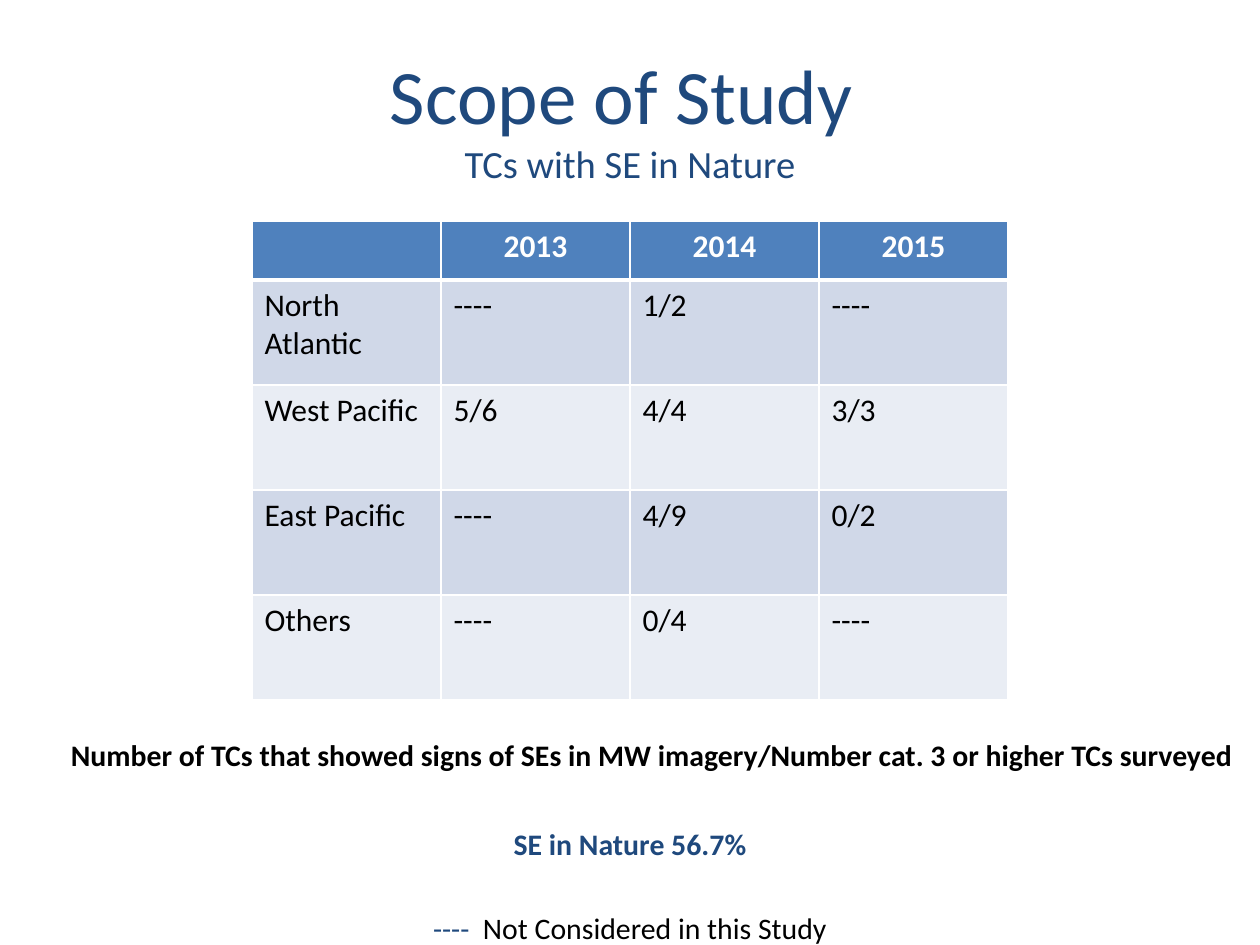
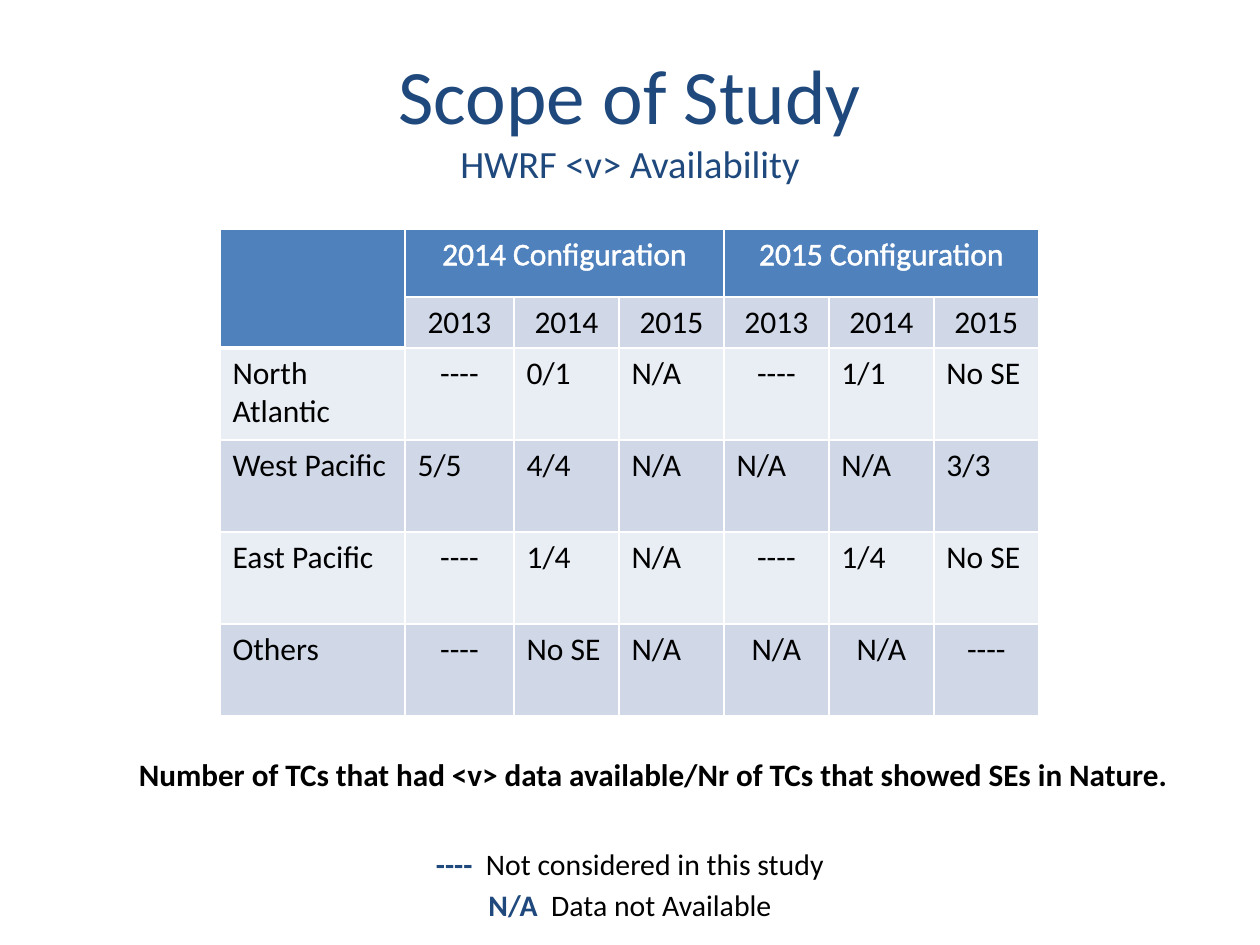
from dataclasses import dataclass
from itertools import product

from lxml.etree import SubElement
from pptx import Presentation
from pptx.dml.color import RGBColor
from pptx.enum.text import MSO_ANCHOR, MSO_AUTO_SIZE, PP_ALIGN
from pptx.oxml.ns import qn
from pptx.util import Pt

PX = 914400 / 126  # EMU per pixel


@dataclass(frozen=True)
class Theme:
    font: str = "Calibri"
    navy: str = "1F497D"
    header: str = "4F81BD"
    dark_band: str = "D0D8E8"
    light_band: str = "E9EDF4"
    white: str = "FFFFFF"
    black: str = "000000"
    title_size: float = 44
    subtitle_size: float = 22
    cell_size: float = 18
    note_size: float = 17


THEME = Theme()


def px(*lengths):
    """Convert pixel lengths to EMU."""
    return [round(length * PX) for length in lengths]


def add_run(paragraph, text, size, color, bold=False):
    run = paragraph.add_run()
    run.text = text
    run.font.name = THEME.font
    run.font.size = Pt(size)
    run.font.bold = bold
    run.font.color.rgb = RGBColor.from_string(color)
    return run


NAVY, BLACK = THEME.navy, THEME.black

# Each note is (space before in px, left indent in px, type size, runs of text, colour, bold).
SCOPES = [
    dict(
        heading="Scope of Study ",
        subtitle="TCs with SE in Nature",
        table_at=(252, 221),
        columns=[189] * 4,
        rows=[59] + [105] * 4,
        cells=[
            ["", "2013", "2014", "2015"],
            ["North Atlantic", "----", "1/2", "----"],
            ["West Pacific", "5/6", "4/4", "3/3"],
            ["East Pacific", "----", "4/9", "0/2"],
            ["Others", "----", "0/4", "----"],
        ],
        merges=[],
        centered=set(product([0], range(4))),
        header_cells=set(product([0], range(4))),
        heavy_below=set(product([0], range(4))),
        header_bold=True,
        notes_at=(0, 703, 1260, 242),
        notes_inset=34,
        notes=[
            (0, 44, THEME.note_size, [(
                "Number of TCs that showed signs of SEs in MW imagery/"
                "Number cat. 3 or higher TCs surveyed", BLACK, True)]),
            (53, 0, THEME.note_size, [("SE in Nature 56.7%", NAVY, True)]),
            (48, 0, THEME.note_size, [
                ("---- ", NAVY, False), (" Not Considered in this Study", BLACK, False)]),
        ],
    ),
    dict(
        heading="Scope of Study",
        subtitle="HWRF <v> Availability",
        table_at=(220, 229),
        columns=[185, 109] + [105] * 5,
        rows=[68, 51] + [92] * 4,
        cells=[
            ["", "2014 Configuration", "", "", "2015 Configuration", "", ""],
            [""] + ["2013", "2014", "2015"] * 2,
            ["North Atlantic", "----", "0/1", "N/A", "----", "1/1", "No SE"],
            ["West Pacific", "5/5", "4/4", "N/A", "N/A", "N/A", "3/3"],
            ["East Pacific", "----", "1/4", "N/A", "----", "1/4", "No SE"],
            ["Others", "----", "No SE", "N/A", "N/A", "N/A", "----"],
        ],
        merges=[((0, 0), (1, 0)), ((0, 1), (0, 3)), ((0, 4), (0, 6))],
        centered=set(product([0, 1], range(7)))
        | {(2, 1), (2, 4), (4, 1), (4, 4), (5, 1), (5, 4), (5, 5), (5, 6)},
        header_cells=set(product([0], range(7))) | {(1, 0)},
        heavy_below={(0, 0), (1, 0)},
        header_bold=False,
        notes_at=(63, 735, 1134, 210),
        notes_inset=20,
        notes=[
            (0, 46, 17.8, [(
                "Number of TCs that had <v> data available/"
                "Nr of TCs that showed SEs in Nature.", BLACK, True)]),
            (53, 0, THEME.note_size, [
                ("---- ", NAVY, True), (" Not considered in this study", BLACK, False)]),
            (6, 0, THEME.note_size, [
                ("N/A ", NAVY, True), (" Data not Available", BLACK, False)]),
        ],
    ),
]

prs = Presentation()
prs.slide_width, prs.slide_height = px(1260, 945)

for scope in SCOPES:
    slide = prs.slides.add_slide(prs.slide_layouts[1])

    # Title with its subtitle line
    title = slide.shapes.title
    title.left, title.top, title.width, title.height = px(63, 38, 1134, 157)
    title.text_frame.auto_size = MSO_AUTO_SIZE.NONE
    title.text_frame.vertical_anchor = MSO_ANCHOR.MIDDLE
    heading = title.text_frame.paragraphs[0]
    heading.alignment = PP_ALIGN.CENTER
    add_run(heading, scope["heading"], THEME.title_size, NAVY)
    heading.add_line_break()
    add_run(heading, scope["subtitle"], THEME.subtitle_size, NAVY)

    # Notes below the table
    notes = slide.placeholders[1]
    notes.left, notes.top, notes.width, notes.height = px(*scope["notes_at"])
    frame = notes.text_frame
    frame.auto_size = MSO_AUTO_SIZE.NONE
    frame.word_wrap = True
    frame.margin_top, = px(scope["notes_inset"])
    for number, (gap, indent, size, runs) in enumerate(scope["notes"]):
        note = frame.add_paragraph() if number else frame.paragraphs[0]
        note.alignment = PP_ALIGN.CENTER
        note.space_before, = px(gap)
        properties = note._p.get_or_add_pPr()
        properties.set("marL", str(px(indent)[0]))
        properties.set("indent", "0")
        SubElement(properties, qn("a:buNone"))
        for text, color, bold in runs:
            add_run(note, text, size, color, bold)

    # Basin by year table
    columns, rows, cells = scope["columns"], scope["rows"], scope["cells"]
    counts = slide.shapes.add_table(
        len(rows), len(columns), *px(*scope["table_at"], sum(columns), sum(rows))).table
    for column, width in zip(counts.columns, px(*columns)):
        column.width = width
    for row, height in zip(counts.rows, px(*rows)):
        row.height = height
    for first, last in scope["merges"]:
        counts.cell(*first).merge(counts.cell(*last))

    for r, c in product(range(len(rows)), range(len(columns))):
        cell = counts.cell(r, c)
        is_header = (r, c) in scope["header_cells"]
        cell_properties = cell._tc.get_or_add_tcPr()
        heavy = {"lnT": (r - 1, c) in scope["heavy_below"],
                 "lnB": (r, c) in scope["heavy_below"]}
        for edge in ("lnL", "lnR", "lnT", "lnB"):
            line = SubElement(cell_properties, qn(f"a:{edge}"),
                              w=str(Pt(3 if heavy.get(edge) else 1)))
            fill = SubElement(line, qn("a:solidFill"))
            SubElement(fill, qn("a:srgbClr"), val=THEME.white)
        band = THEME.dark_band if r % 2 else THEME.light_band
        cell.fill.solid()
        cell.fill.fore_color.rgb = RGBColor.from_string(THEME.header if is_header else band)

        if not cells[r][c]:
            continue
        entry = cell.text_frame.paragraphs[0]
        entry.alignment = PP_ALIGN.CENTER if (r, c) in scope["centered"] else PP_ALIGN.LEFT
        run = add_run(entry, cells[r][c], THEME.cell_size,
                      THEME.white if is_header else BLACK,
                      is_header and scope["header_bold"])
        if is_header and not scope["header_bold"]:
            outline = run._r.get_or_add_rPr()
            line = outline.makeelement(qn("a:ln"), {"w": str(Pt(0.75))})
            fill = SubElement(line, qn("a:solidFill"))
            SubElement(fill, qn("a:srgbClr"), val=THEME.white)
            outline.insert(0, line)

prs.save("out.pptx")
